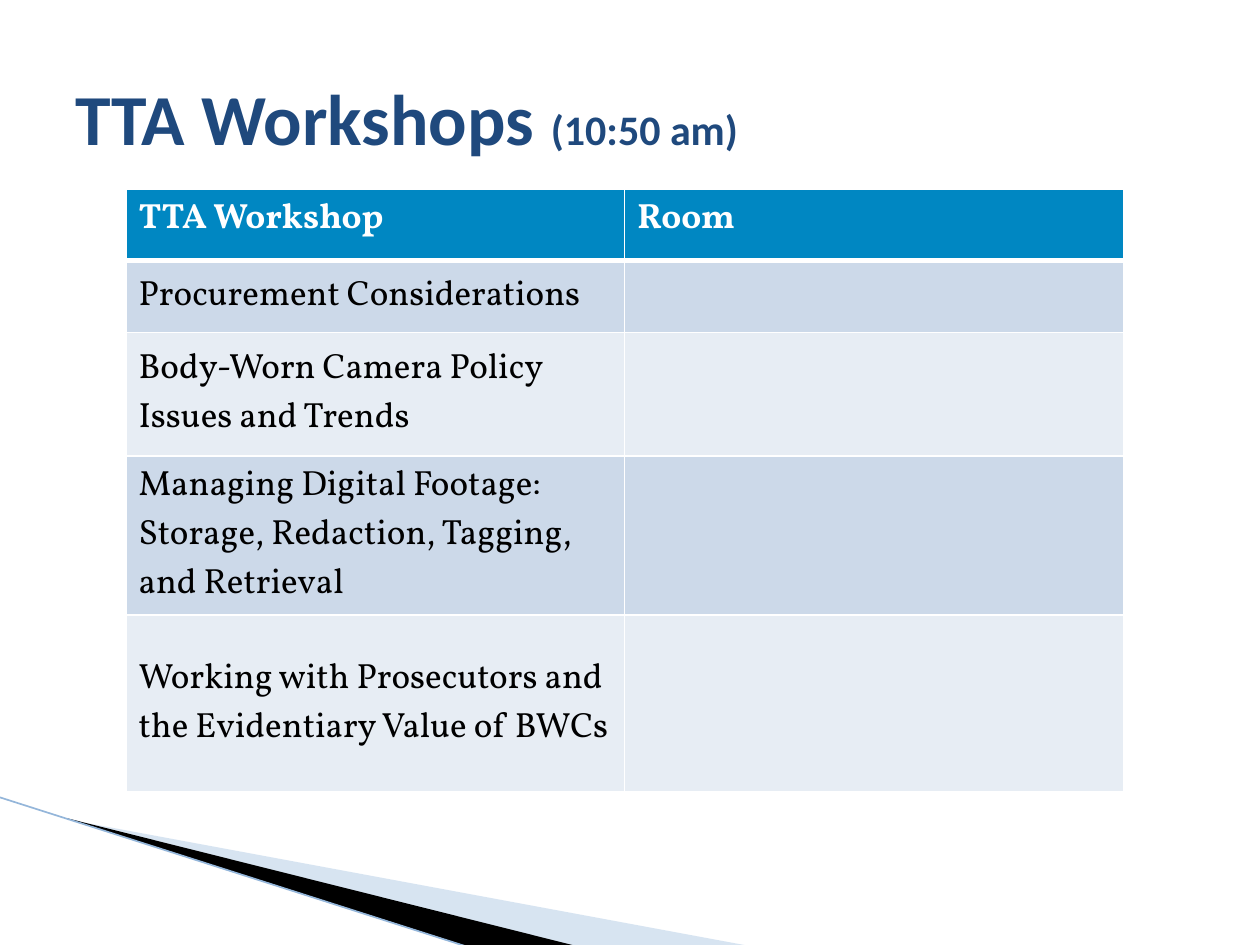
from dataclasses import dataclass, field
from typing import Any

from lxml import etree
from pptx import Presentation
from pptx import util as u
from pptx.dml import color
from pptx.enum import shapes, text
from pptx.oxml import ns

COLORS = {
    "title": "1F497D", "header": "0087C2", "band_dark": "CCD9E9",
    "band_light": "E7EDF4", "white": "FFFFFF", "black": "000000",
    "wedge": "9DBDDE", "edge": "94B6DA",
}


def rgb(name):
    return color.RGBColor.from_string(COLORS[name])


def apply(target, values):
    for name, value in values.items():
        setattr(target, name, value)


def add_xml(parent, tag, **attributes):
    return etree.SubElement(parent, ns.qn(tag), attributes)


@dataclass
class SlideBuilder:
    slide: Any
    title_font: dict = field(default_factory=lambda: {"name": "Calibri", "bold": True})
    header_font: dict = field(default_factory=lambda: {
        "name": "Vollkorn", "size": u.Pt(20), "bold": True})
    body_font: dict = field(default_factory=lambda: {
        "name": "Vollkorn", "size": u.Pt(20), "bold": False})

    def wedge(self, points, fill, opacity=None):
        start, *rest = [(u.Pt(x), u.Pt(y)) for x, y in points]
        builder = self.slide.shapes.build_freeform(*start)
        builder.add_line_segments(rest, close=True)
        shape = builder.convert_to_shape()
        shape.shadow.inherit = False
        shape.fill.solid()
        shape.fill.fore_color.rgb = rgb(fill)
        shape.line.fill.background()
        if opacity:
            tone = shape.element.spPr.find(".//" + ns.qn("a:srgbClr"))
            add_xml(tone, "a:alpha", val=str(opacity * 1000))

    def line(self, start, end, name, width):
        points = [u.Pt(value) for value in (*start, *end)]
        connector = self.slide.shapes.add_connector(shapes.MSO_CONNECTOR.STRAIGHT, *points)
        connector.line.color.rgb = rgb(name)
        connector.line.width = u.Pt(width)
        add_xml(connector.element.spPr, "a:effectLst")

    def title(self, box, runs):
        title = self.slide.shapes.title
        apply(title, dict(zip(("left", "top", "width", "height"), map(u.Pt, box))))
        apply(title.text_frame, {"vertical_anchor": text.MSO_ANCHOR.MIDDLE, "word_wrap": True})
        paragraph = title.text_frame.paragraphs[0]
        paragraph.alignment = text.PP_ALIGN.LEFT
        for words, size in runs:
            run = paragraph.add_run()
            run.text = words
            apply(run.font, {**self.title_font, "size": u.Pt(size)})
            run.font.color.rgb = rgb("title")

    def borders(self, cell, bottom):
        properties = cell._tc.get_or_add_tcPr()
        for side, width in {"L": 1, "R": 1, "T": 1, "B": bottom}.items():
            border = add_xml(properties, "a:ln" + side, w=str(u.Pt(width)))
            add_xml(add_xml(border, "a:solidFill"), "a:srgbClr", val=COLORS["white"])

    def table(self, box, heights, rows):
        frame = self.slide.shapes.add_table(len(rows), len(rows[0]), *map(u.Pt, box))
        table = frame.table
        for row, height in zip(table.rows, heights):
            row.height = u.Pt(height)
        for row_index, row in enumerate(rows):
            header = row_index == 0
            fill = "header" if header else ("band_light", "band_dark")[row_index % 2]
            for column_index, words in enumerate(row):
                cell = table.cell(row_index, column_index)
                self.borders(cell, 3 if header else 1)
                cell.fill.solid()
                cell.fill.fore_color.rgb = rgb(fill)
                cell.text = words
                anchor = text.MSO_ANCHOR.TOP if header else text.MSO_ANCHOR.MIDDLE
                cell.vertical_anchor = anchor
                font = cell.text_frame.paragraphs[0].font
                apply(font, self.header_font if header else self.body_font)
                font.color.rgb = rgb("white" if header else "black")


def main():
    presentation = Presentation()
    apply(presentation, {"slide_width": u.Pt(720), "slide_height": u.Pt(540)})
    builder = SlideBuilder(presentation.slides.add_slide(presentation.slide_layouts[5]))

    builder.wedge([(39.6, 468.5), (428, 540.5), (328, 540.5), (39.6, 468)], "wedge", 40)
    builder.wedge([(38, 467.5), (329, 540.5), (268, 541), (39, 468)], "black")
    builder.line((-0.5, 455.5), (267, 541), "edge", 0.95)
    builder.title((36, 21.6, 648, 90), [("TTA Workshops ", 41), ("(10:50 am)", 24)])
    builder.table((72, 108, 570, 324), (41, 41, 70.5, 70.5, 101), [
        ("TTA Workshop", "Room"),
        ("Procurement Considerations", ""),
        ("Body-Worn Camera Policy Issues and Trends", ""),
        ("Managing Digital Footage: Storage, Redaction, Tagging, and Retrieval", ""),
        ("Working with Prosecutors and the Evidentiary Value of BWCs", ""),
    ])
    presentation.save("out.pptx")


if __name__ == "__main__":
    main()
